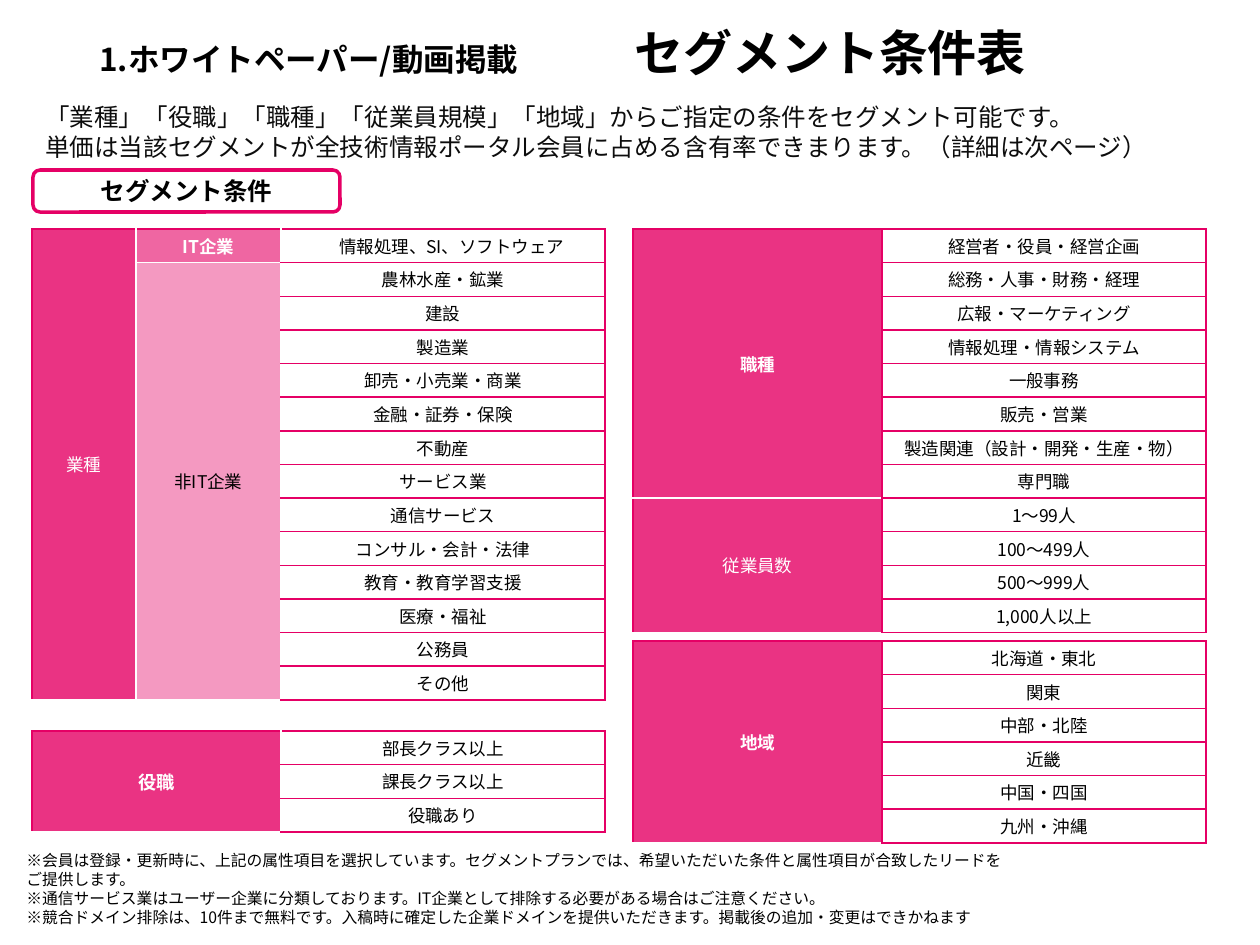
"""Build the segment condition slide: heading, introduction, four tables and notes."""
from lxml import etree
from pptx import Presentation
from pptx.dml.color import RGBColor
from pptx.enum.shapes import MSO_SHAPE
from pptx.enum.text import MSO_ANCHOR, PP_ALIGN
from pptx.oxml.ns import qn
from pptx.util import Emu, Pt

CENTER, LEFT = PP_ALIGN.CENTER, PP_ALIGN.LEFT
MIDDLE, TOP = MSO_ANCHOR.MIDDLE, MSO_ANCHOR.TOP
ROUNDED = MSO_SHAPE.ROUNDED_RECTANGLE
FONT = "Noto Sans CJK JP"
PINK, WHITE, BLACK, INK = "E50065", "FFFFFF", "000000", "0D0D0D"
SIDES = ("L", "R", "T", "B")
PINK_EDGES = (PINK, PINK, PINK, PINK)
WHITE_LEFT = (WHITE, PINK, PINK, PINK)
WHITE_RIGHT = (PINK, WHITE, PINK, PINK)

HEADING = ("1.ホワイトペーパー/動画掲載\t", "セグメント条件表")
HEADING_TAB = 535
INTRO = [
    "「業種」「役職」「職種」「従業員規模」「地域」からご指定の条件をセグメント可能です。",
    "単価は当該セグメントが全技術情報ポータル会員に占める含有率できまります。（詳細は次ページ）",
]
NOTES = [
    "※会員は登録・更新時に、上記の属性項目を選択しています。セグメントプランでは、希望いただいた条件と属性項目が合致したリードをご提供します。",
    "※通信サービス業はユーザー企業に分類しております。IT企業として排除する必要がある場合はご注意ください。",
    "※競合ドメイン排除は、10件まで無料です。入稿時に確定した企業ドメインを提供いただきます。掲載後の追加・変更はできかねます",
]

# group: text, column, first row, row count, opacity, size, colour, bold, edges
TABLES = [
    {
        "frame": (32, 229, 471), "columns": (104, 145, 324), "edges": WHITE_LEFT,
        "groups": [
            ("業種", 0, 0, 14, 80, 10, WHITE, False, WHITE_RIGHT),
            ("IT企業", 1, 0, 1, 60, 10, WHITE, True, (WHITE, WHITE, PINK, WHITE)),
            ("非IT企業", 1, 1, 13, 40, 10, BLACK, False, (WHITE, WHITE, WHITE, PINK)),
        ],
        "items": ["情報処理、SI、ソフトウェア", "農林水産・鉱業", "建設", "製造業",
                  "卸売・小売業・商業", "金融・証券・保険", "不動産", "サービス業",
                  "通信サービス", "コンサル・会計・法律", "教育・教育学習支援",
                  "医療・福祉", "公務員", "その他"],
    },
    {
        "frame": (32, 731, 101), "columns": (249, 324), "edges": WHITE_LEFT,
        "groups": [("役職", 0, 0, 3, 80, 10.5, WHITE, True, WHITE_RIGHT)],
        "items": ["部長クラス以上", "課長クラス以上", "役職あり"],
    },
    {
        "frame": (633, 229, 404), "columns": (249, 324), "edges": PINK_EDGES,
        "groups": [
            ("職種", 0, 0, 8, 80, 10, WHITE, True, (PINK, PINK, PINK, WHITE)),
            ("従業員数", 0, 8, 4, 80, 10, WHITE, False, (PINK, PINK, WHITE, PINK)),
        ],
        "items": ["経営者・役員・経営企画", "総務・人事・財務・経理", "広報・マーケティング",
                  "情報処理・情報システム", "一般事務", "販売・営業",
                  "製造関連（設計・開発・生産・物）", "専門職", "1～99人", "100～499人",
                  "500～999人", "1,000人以上"],
    },
    {
        "frame": (633, 641, 202), "columns": (249, 324), "edges": PINK_EDGES,
        "groups": [("地域", 0, 0, 6, 80, 10, WHITE, True, PINK_EDGES)],
        "items": ["北海道・東北", "関東", "中部・北陸", "近畿", "中国・四国", "九州・沖縄"],
    },
]


def px(length):
    return Emu(round(length * 914400 / 126))


def rgb(value):
    return RGBColor.from_string(value)


def style_run(run, size, colour, bold=False):
    run.font.size, run.font.bold, run.font.name = Pt(size), bold, FONT
    run.font.color.rgb = rgb(colour)
    etree.SubElement(run.font._element, qn("a:ea"), typeface=FONT)


def write(frame, lines, size, colour, bold=False, align=LEFT):
    frame.text = "\n".join(lines)
    for paragraph in frame.paragraphs:
        paragraph.alignment = align
        for run in paragraph.runs:
            style_run(run, size, colour, bold)


def add_textbox(slide, box, anchor=TOP):
    frame = slide.shapes.add_textbox(*map(px, box)).text_frame
    frame.word_wrap = True
    frame.vertical_anchor = anchor
    return frame


def add_heading(slide):
    paragraph = add_textbox(slide, (87, 4, 1000, 96), MIDDLE).paragraphs[0]
    stops = etree.SubElement(paragraph._p.get_or_add_pPr(), qn("a:tabLst"))
    etree.SubElement(stops, qn("a:tab"), pos=str(px(HEADING_TAB)), algn="l")
    for text, size in zip(HEADING, (18, 28)):
        run = paragraph.add_run()
        run.text = text
        style_run(run, size, BLACK, True)


def add_label(slide):
    label = slide.shapes.add_shape(ROUNDED, *map(px, (33, 170, 307, 42)))
    label.shadow.inherit = False
    label.fill.background()
    label.line.color.rgb = rgb(PINK)
    label.line.width = Pt(2)
    label.text_frame.vertical_anchor = MIDDLE
    write(label.text_frame, ["セグメント条件"], 14, BLACK, True, CENTER)


def draw_edges(cell, colours, sides=SIDES):
    properties = cell._tc.get_or_add_tcPr()
    for side, colour in zip(SIDES, colours):
        if side in sides:
            line = etree.SubElement(properties, qn(f"a:ln{side}"), w=str(Pt(1)))
            fill = etree.SubElement(line, qn("a:solidFill"))
            etree.SubElement(fill, qn("a:srgbClr"), val=colour)


def fill_cell(cell, text, size, colour, bold=False):
    cell.vertical_anchor = MIDDLE
    cell.margin_top = cell.margin_bottom = 0
    write(cell.text_frame, [text], size, colour, bold, CENTER)


def tint(cell, opacity):
    cell.fill.solid()
    cell.fill.fore_color.rgb = rgb(PINK)
    colour = cell._tc.tcPr.find(qn("a:solidFill"))[0]
    etree.SubElement(colour, qn("a:alpha"), val=str(opacity * 1000))


def add_group(table, group):
    text, column, first, count, opacity, size, colour, bold, edges = group
    last = first + count - 1
    for row in range(first, last + 1):
        cell = table.cell(row, column)
        sides = "LR" + "T" * (row == first) + "B" * (row == last)
        draw_edges(cell, edges, sides)
        tint(cell, opacity)
    head = table.cell(first, column)
    if count > 1:
        head.merge(table.cell(last, column))
    fill_cell(head, text, size, colour, bold)


def add_segments(slide, segment):
    left, top, height = segment["frame"]
    widths, items = segment["columns"], segment["items"]
    table = slide.shapes.add_table(
        len(items), len(widths), px(left), px(top), px(sum(widths)), px(height)).table
    table.first_row = table.horz_banding = False
    for column, width in zip(table.columns, widths):
        column.width = px(width)
    for row in table.rows:
        row.height = px(height / len(items))
    for group in segment["groups"]:
        add_group(table, group)
    for row, item in enumerate(items):
        cell = table.cell(row, len(widths) - 1)
        draw_edges(cell, segment["edges"])
        cell.fill.background()
        fill_cell(cell, item, 10, BLACK)
    return table


def main():
    deck = Presentation()
    deck.slide_width, deck.slide_height = px(1260), px(945)
    slide = deck.slides.add_slide(deck.slide_layouts[6])
    add_heading(slide)
    add_label(slide)
    write(add_textbox(slide, (14, 845, 1013, 71)), NOTES, 9, BLACK)
    write(add_textbox(slide, (33, 96, 1206, 72)), INTRO, 14, INK)
    industries, *_ = [add_segments(slide, segment) for segment in TABLES]
    industries.cell(0, 2).margin_left = px(30)
    deck.save("out.pptx")


if __name__ == "__main__":
    main()
